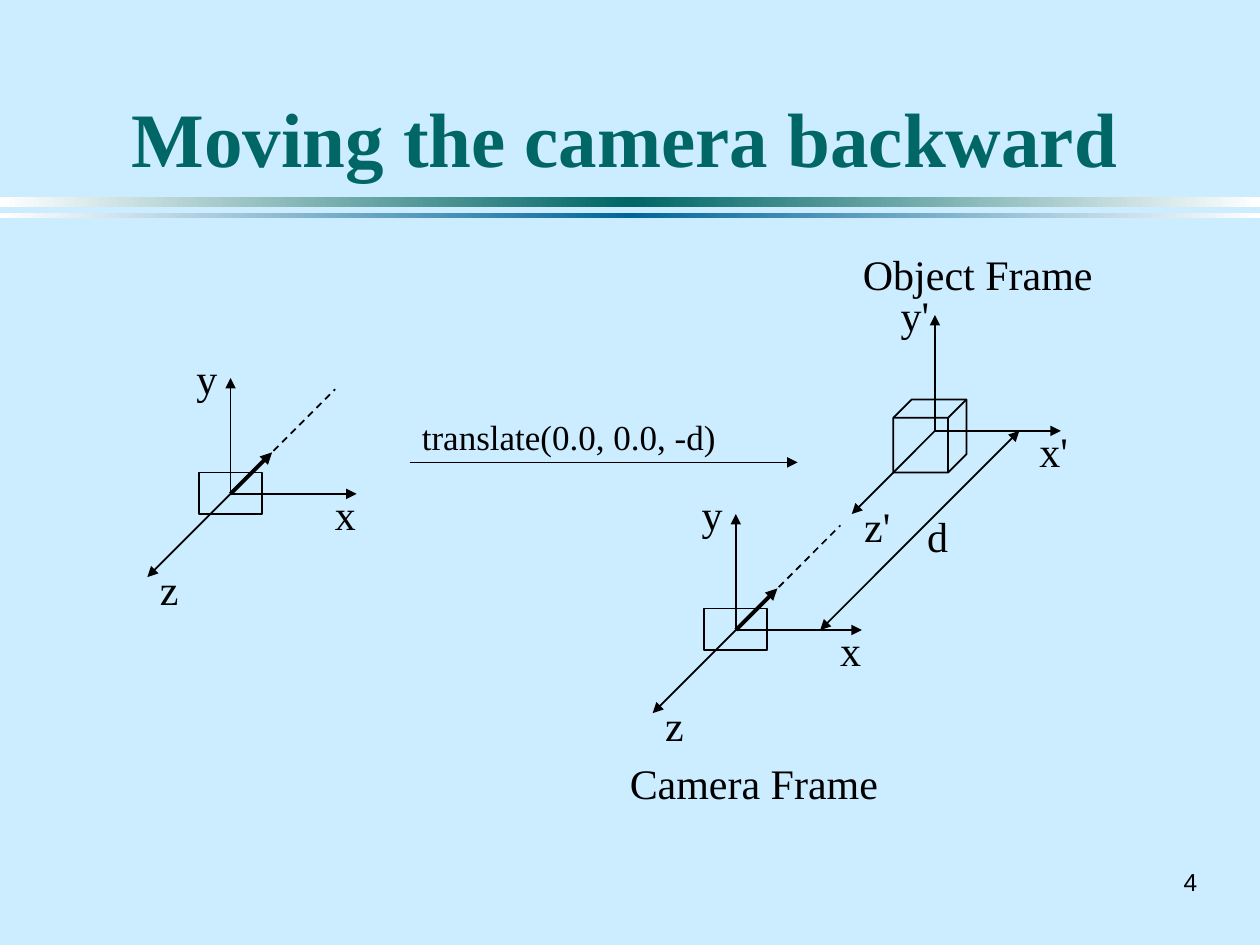
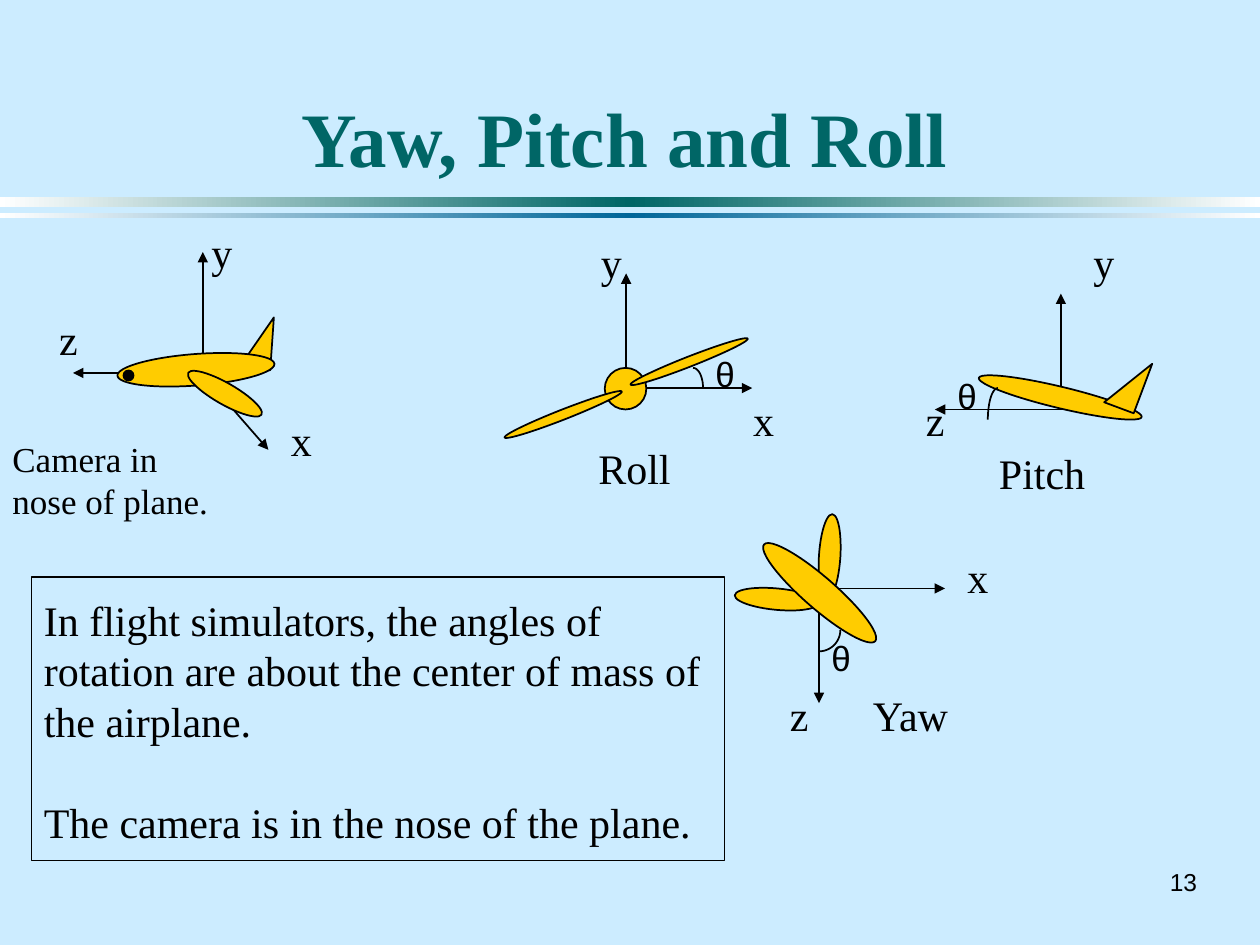
"""Builds two slides on camera frames and aircraft rotation angles."""
from dataclasses import dataclass
from math import cos, radians, sin

from lxml.etree import SubElement
from pptx import Presentation
from pptx.dml.color import RGBColor
from pptx.enum.dml import MSO_LINE_DASH_STYLE as Dash
from pptx.enum.shapes import MSO_CONNECTOR as Connector, MSO_SHAPE as Preset
from pptx.enum.text import MSO_ANCHOR as Anchor, MSO_AUTO_SIZE as AutoSize, PP_ALIGN as Align
from pptx.oxml.ns import qn
from pptx.util import Inches, Pt


@dataclass(frozen=True)
class Theme:
    """Colours, fonts and type sizes of the deck."""
    background: str = "CCECFF"
    ink: str = "000000"
    teal: str = "006666"
    blue: str = "006699"
    white: str = "FFFFFF"
    plane: str = "FFCC00"
    serif: str = "Times New Roman"
    sans: str = "Arial"
    title: int = 44
    label: int = 24
    note: int = 20
    number: int = 14
    thin: float = 1
    thick: float = 2.25


class Deck:
    """Holds the style and the current slide, and draws each kind of element."""

    def __init__(self, theme):
        """Open an empty deck with the shared background."""
        self.theme = theme
        self.show = Presentation()
        self.show.slide_width, self.show.slide_height = Inches(10), Inches(7.5)
        self.fill(self.show.slide_master.background.fill, theme.background)
        self.slide = None

    def fill(self, target, colour):
        """Give a fill one solid colour."""
        target.solid()
        target.fore_color.rgb = RGBColor.from_string(colour)

    def outline(self, line, width):
        """Give a line the ink colour and a width."""
        self.fill(line.fill, self.theme.ink)
        line.width = Pt(width)

    def style_text(self, frame, size, font, colour, bold=False, align=Align.LEFT):
        """Format every paragraph and run of a text frame."""
        for paragraph in frame.paragraphs:
            paragraph.alignment = align
            for run in paragraph.runs:
                run.font.size, run.font.name, run.font.bold = Pt(size), font, bold
                run.font.color.rgb = RGBColor.from_string(colour)

    def new_slide(self, title, number):
        """Start a slide with its title, bands and number."""
        theme = self.theme
        self.slide = self.show.slides.add_slide(self.show.slide_layouts[5])
        self.band(1.56, 0.08, theme.teal)
        self.band(1.69, 0.04, theme.blue)
        heading = self.slide.shapes.title
        heading.left, heading.top = Inches(0.67), Inches(0.25)
        heading.width, heading.height = Inches(8.58), Inches(1.25)
        frame = heading.text_frame
        frame.text = title
        frame.auto_size, frame.vertical_anchor = AutoSize.NONE, Anchor.BOTTOM
        self.style_text(frame, theme.title, theme.serif, theme.teal, True, Align.CENTER)
        self.text(number, 9.17, 6.83, 0.43, 0.33, theme.number, theme.sans,
                  align=Align.RIGHT, anchor=Anchor.MIDDLE)

    def band(self, top, height, colour):
        """Draw a full-width band that fades to white at both ends."""
        strip = self.shape(Preset.RECTANGLE, 0, top, 10, height)
        strip.line.fill.background()
        strip.fill.gradient()
        strip.fill.gradient_angle = 0
        stops = strip.fill._fill._gradFill.gsLst
        for stop in list(stops):
            stops.remove(stop)
        for place, shade in ((0, self.theme.white), (50, colour), (100, self.theme.white)):
            stop = SubElement(stops, qn("a:gs"), pos=str(place * 1000))
            SubElement(stop, qn("a:srgbClr"), val=shade)

    def shape(self, preset, left, top, width, height, colour=None, turn=0, flip=False):
        """Draw an outlined preset shape, filled if a colour is given."""
        drawn = self.slide.shapes.add_shape(
            preset, Inches(left), Inches(top), Inches(width), Inches(height))
        drawn.shadow.inherit = False
        drawn.rotation = turn
        self.outline(drawn.line, self.theme.thin)
        if colour:
            self.fill(drawn.fill, colour)
        else:
            drawn.fill.background()
        if flip:
            drawn.element.spPr.xfrm.set("flipH", "1")
        return drawn

    def ellipse(self, left, top, width, height, turn=0):
        """Draw a rounded part of the plane."""
        return self.shape(Preset.OVAL, left, top, width, height, self.theme.plane, turn)

    def fin(self, left, top, turn):
        """Draw the tail fin of the plane."""
        self.shape(Preset.RIGHT_TRIANGLE, left, top, 0.25, 0.42, self.theme.plane, turn, True)

    def line(self, start, end, width=None, dashed=False, heads=("tailEnd",)):
        """Draw a straight line with arrowheads at the named ends."""
        drawn = self.slide.shapes.add_connector(
            Connector.STRAIGHT, *(Inches(value) for value in (*start, *end)))
        self.outline(drawn.line, width or self.theme.thin)
        if dashed:
            drawn.line.dash_style = Dash.DASH
        ends = drawn.line._get_or_add_ln()
        for head in heads:
            SubElement(ends, qn(f"a:{head}"), type="triangle")
        SubElement(drawn.element.spPr, qn("a:effectLst"))

    def arc(self, x, y, across, down, start):
        """Draw a quarter ellipse clockwise from a start angle."""
        angles = [radians(start + step) for step in range(0, 91, 5)]
        points = [(Inches(x + across * cos(a)), Inches(y + down * sin(a))) for a in angles]
        builder = self.slide.shapes.build_freeform(*points[0])
        builder.add_line_segments(points[1:], close=False)
        curve = builder.convert_to_shape()
        curve.shadow.inherit = False
        curve.fill.background()
        self.outline(curve.line, self.theme.thin)

    def text(self, words, left, top, width=0.37, height=0.5, size=None, font=None,
             wrap=False, align=Align.LEFT, anchor=Anchor.TOP):
        """Place a text box and return its frame."""
        theme = self.theme
        frame = self.slide.shapes.add_textbox(
            Inches(left), Inches(top), Inches(width), Inches(height)).text_frame
        frame.text = words
        frame.word_wrap, frame.vertical_anchor = wrap, anchor
        frame.auto_size = AutoSize.SHAPE_TO_FIT_TEXT
        self.style_text(frame, size or theme.label, font or theme.serif, theme.ink, align=align)
        return frame

    def theta(self, left, top):
        """Label a rotation angle."""
        self.text("θ", left, top, 0.25, 0.43, self.theme.note, self.theme.sans, wrap=True)

    def axes(self, x, y, *tips):
        """Draw axis arrows from one origin to the given offsets."""
        for across, down in tips:
            self.line((x, y), (x + across, y + down))

    def frame_axes(self, x, y, mark=""):
        """Draw the three labelled axes of a coordinate frame."""
        self.axes(x, y, (0, -0.92), (-0.66, 0.66), (1, 0))
        width = 0.43 if mark else 0.37
        for name, across, down in (("x", 0.73, -0.09), ("y", -0.37, -1.17), ("z", -0.66, 0.5)):
            self.text(name + mark, x + across, y + down, width - 0.02 * (name == "z"))

    def camera(self, x, y):
        """Draw a camera with its frame and line of sight."""
        self.frame_axes(x, y)
        self.line((x, y), (x + 0.83, y - 0.83), dashed=True, heads=())
        self.shape(Preset.RECTANGLE, x - 0.25, y - 0.17, 0.5, 0.33)
        self.line((x, y), (x + 0.33, y - 0.33), self.theme.thick)


def draw_camera_move(deck):
    """Show the camera before and after the translation."""
    deck.new_slide("Moving the camera backward", "4")
    deck.camera(1.83, 3.92)
    deck.camera(5.84, 5)
    deck.frame_axes(7.42, 3.42, "'")
    deck.shape(Preset.CUBE, 7.09, 3.17, 0.58, 0.58)
    deck.line((6.51, 5), (8.09, 3.42), heads=("headEnd", "tailEnd"))
    deck.text("d", 7.26, 4)
    deck.line((3.25, 3.67), (6.33, 3.67))
    deck.text("translate(0.0, 0.0, -d)", 3.25, 3.25, 2.66, 0.44, deck.theme.note)
    deck.text("Camera Frame", 4.9, 5.96, 2.17)
    deck.text("Object Frame", 6.75, 1.92, 2.02)


def draw_roll(deck):
    """Show the plane from the front."""
    deck.axes(4.97, 3.08, (0, -0.91), (1, 0))
    deck.text("x", 5.88, 3.08)
    deck.text("y", 4.67, 1.83)
    deck.ellipse(4.8, 2.92, 0.33, 0.33)
    for left, top in ((4.97, 2.83), (3.97, 3.25)):
        deck.ellipse(left, top, 1, 0.08, 338.6)
    deck.text("Roll", 4.65, 3.46, 0.78)
    deck.arc(5.5, 3.08, 0.08, 0.16, 270)
    deck.theta(5.58, 2.75)


def draw_pitch(deck):
    """Show the plane from the side."""
    deck.axes(8.42, 3.25, (0, -0.92), (-1, 0))
    deck.text("z", 7.25, 3.08, 0.35)
    deck.text("y", 8.58, 1.83)
    deck.ellipse(7.75, 3.07, 1.33, 0.17, 13.5)
    deck.fin(8.83, 2.83, 20.5)
    deck.arc(7.92, 3.33, 0.08, 0.25, 180)
    deck.theta(7.5, 2.92)
    deck.text("Pitch", 7.83, 3.5, 0.89)


def draw_yaw(deck):
    """Show the plane from above."""
    deck.axes(6.5, 4.67, (0, 0.91), (1, 0))
    deck.text("x", 7.58, 4.33)
    deck.text("z", 6.17, 5.42, 0.35)
    deck.arc(6.5, 5, 0.17, 0.17, 0)
    deck.theta(6.5, 5)
    deck.ellipse(6.25, 4.33, 0.67, 0.17, 273.6)
    deck.ellipse(5.83, 4.67, 0.67, 0.17, 185.3)
    deck.ellipse(5.92, 4.58, 1.17, 0.25, 41)
    deck.text("Yaw", 6.83, 5.42, 0.83)


def draw_plane(deck):
    """Show the plane with its camera and axes."""
    for start, end in (((1.61, 2.91), (1.61, 2)), ((1.65, 3.02), (2.13, 3.57)),
                       ((1.58, 2.96), (0.58, 2.96))):
        deck.line(start, end)
    deck.text("x", 2.21, 3.24)
    deck.text("y", 1.58, 1.75)
    deck.text("z", 0.37, 2.44, 0.35)
    deck.fin(1.91, 2.51, 4)
    deck.ellipse(0.93, 2.81, 1.25, 0.25, 355.7)
    deck.shape(Preset.OVAL, 0.98, 2.94, 0.08, 0.08, deck.theme.ink)
    deck.ellipse(1.45, 3.04, 0.67, 0.17, 29.7)
    deck.text("Camera in nose of plane.", 0, 3.42, 1.77, 0.77, deck.theme.note, wrap=True)


def draw_rotations(deck):
    """Show the three rotation angles of a plane."""
    deck.new_slide("Yaw, Pitch and Roll", "13")
    draw_roll(deck)
    draw_pitch(deck)
    draw_yaw(deck)
    summary = deck.text(
        "In flight simulators, the angles of rotation are about the center of mass of "
        "the airplane.\nThe camera is in the nose of the plane.",
        0.25, 4.67, 5.67, 2.1, wrap=True)
    summary.paragraphs[1].space_before = Pt(28.8)
    deck.shape(Preset.RECTANGLE, 0.25, 4.58, 5.5, 2.25)
    draw_plane(deck)


def main():
    """Build the deck and save it."""
    deck = Deck(Theme())
    draw_camera_move(deck)
    draw_rotations(deck)
    deck.show.save("out.pptx")


if __name__ == "__main__":
    main()
